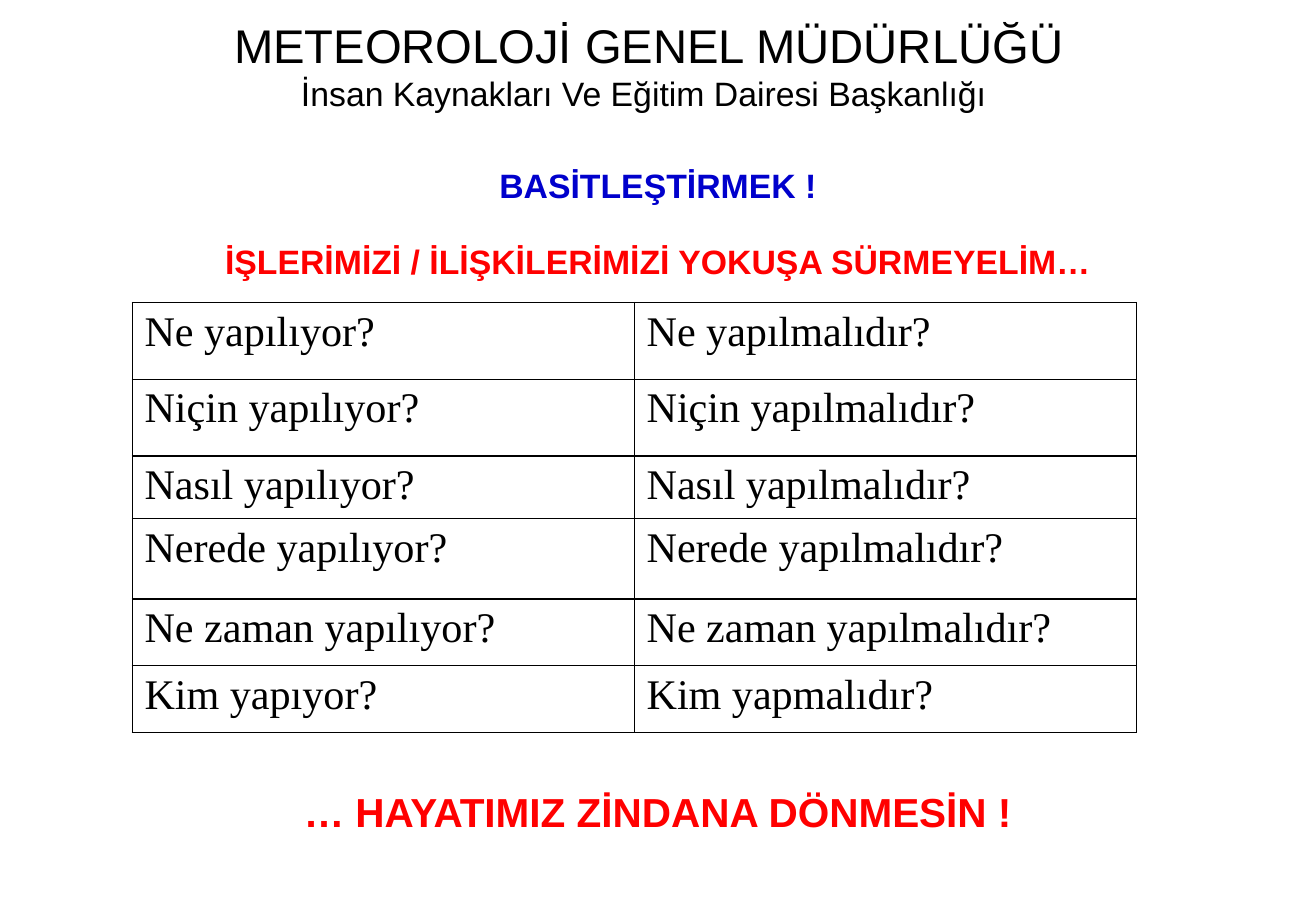
"""Builds the slide on simplifying work: headings, a question table and a closing line."""
from pptx import Presentation
from pptx import util as u
from pptx.dml.color import RGBColor
from pptx.enum import text
from pptx.oxml import parse_xml
from pptx.oxml.ns import nsdecls

BLACK = RGBColor(0, 0, 0)
BLUE = RGBColor(0, 0, 0xCC)
RED = RGBColor(0xFF, 0, 0)

SLIDE_SIZE = (780, 540)
HEADINGS = [
    ((0, 94.3, 780, 77.8), True, [
        ("BASİTLEŞTİRMEK !", 20, BLUE, True, 0),
        ("İŞLERİMİZİ / İLİŞKİLERİMİZİ YOKUŞA SÜRMEYELİM…", 20, RED, True, 20.7)]),
    ((83.5, 5.8, 601.9, 65.5), True, [
        ("METEOROLOJİ GENEL MÜDÜRLÜĞÜ", 28, BLACK, False, 0),
        ("İnsan Kaynakları Ve Eğitim Dairesi Başkanlığı ", 20, BLACK, False, 0)]),
    ((170.6, 463, 438.5, 36.7), False, [
        ("… HAYATIMIZ ZİNDANA DÖNMESİN !", 24, RED, True, 0)]),
]
QUESTIONS = [
    ("Ne yapılıyor?", "Ne yapılmalıdır?", 45.4),
    ("Niçin yapılıyor?", "Niçin yapılmalıdır?", 45.4),
    ("Nasıl yapılıyor?", "Nasıl yapılmalıdır?", 37.2),
    ("Nerede yapılıyor?", "Nerede yapılmalıdır?", 47.6),
    ("Ne zaman yapılıyor?", "Ne zaman yapılmalıdır?", 39.7),
    ("Kim yapıyor?", "Kim yapmalıdır?", 39.7),
]
TABLE_LEFT, TABLE_TOP, COLUMN_WIDTH = 78.5, 179.4, 297.6
QUESTION_FONT = {"name": "Times New Roman", "size": u.Pt(25), "bold": False}
BORDER_SIDES = ("lnL", "lnR", "lnT", "lnB")


def set_font(font, color, values):
    for key, value in values.items():
        setattr(font, key, value)
    font.color.rgb = color


def add_heading(slide, place, wrap, lines):
    frame = slide.shapes.add_textbox(*map(u.Pt, place)).text_frame
    frame.word_wrap = wrap
    for index, (words, size, color, bold, gap) in enumerate(lines):
        line = frame.add_paragraph() if index else frame.paragraphs[0]
        line.text = words
        line.alignment = text.PP_ALIGN.CENTER
        if gap:
            line.space_before = u.Pt(gap)
        set_font(line.runs[0].font, color,
                 {"name": "Arial", "size": u.Pt(size), "bold": bold})


def add_borders(cell):
    properties = cell._tc.get_or_add_tcPr()
    for index, side in enumerate(BORDER_SIDES):
        properties.insert(index, parse_xml(
            f'<a:{side} {nsdecls("a")} w="{u.Pt(1)}"><a:solidFill>'
            f'<a:srgbClr val="{BLACK}"/></a:solidFill></a:{side}>'))


def add_questions(slide):
    height = sum(row[-1] for row in QUESTIONS)
    table = slide.shapes.add_table(
        len(QUESTIONS), 2, u.Pt(TABLE_LEFT), u.Pt(TABLE_TOP),
        u.Pt(2 * COLUMN_WIDTH), u.Pt(height)).table
    for flag in ("first_row", "horz_banding"):
        setattr(table, flag, False)
    for column in table.columns:
        column.width = u.Pt(COLUMN_WIDTH)
    for row, (*questions, row_height) in zip(table.rows, QUESTIONS):
        row.height = u.Pt(row_height)
        for cell, question in zip(row.cells, questions):
            cell.text = question
            cell.fill.background()
            add_borders(cell)
            set_font(cell.text_frame.paragraphs[0].runs[0].font, BLACK, QUESTION_FONT)


def main():
    deck = Presentation()
    deck.slide_width, deck.slide_height = map(u.Pt, SLIDE_SIZE)
    slide = deck.slides.add_slide(deck.slide_layouts[6])
    add_questions(slide)
    for heading in HEADINGS:
        add_heading(slide, *heading)
    deck.save("out.pptx")


if __name__ == "__main__":
    main()
